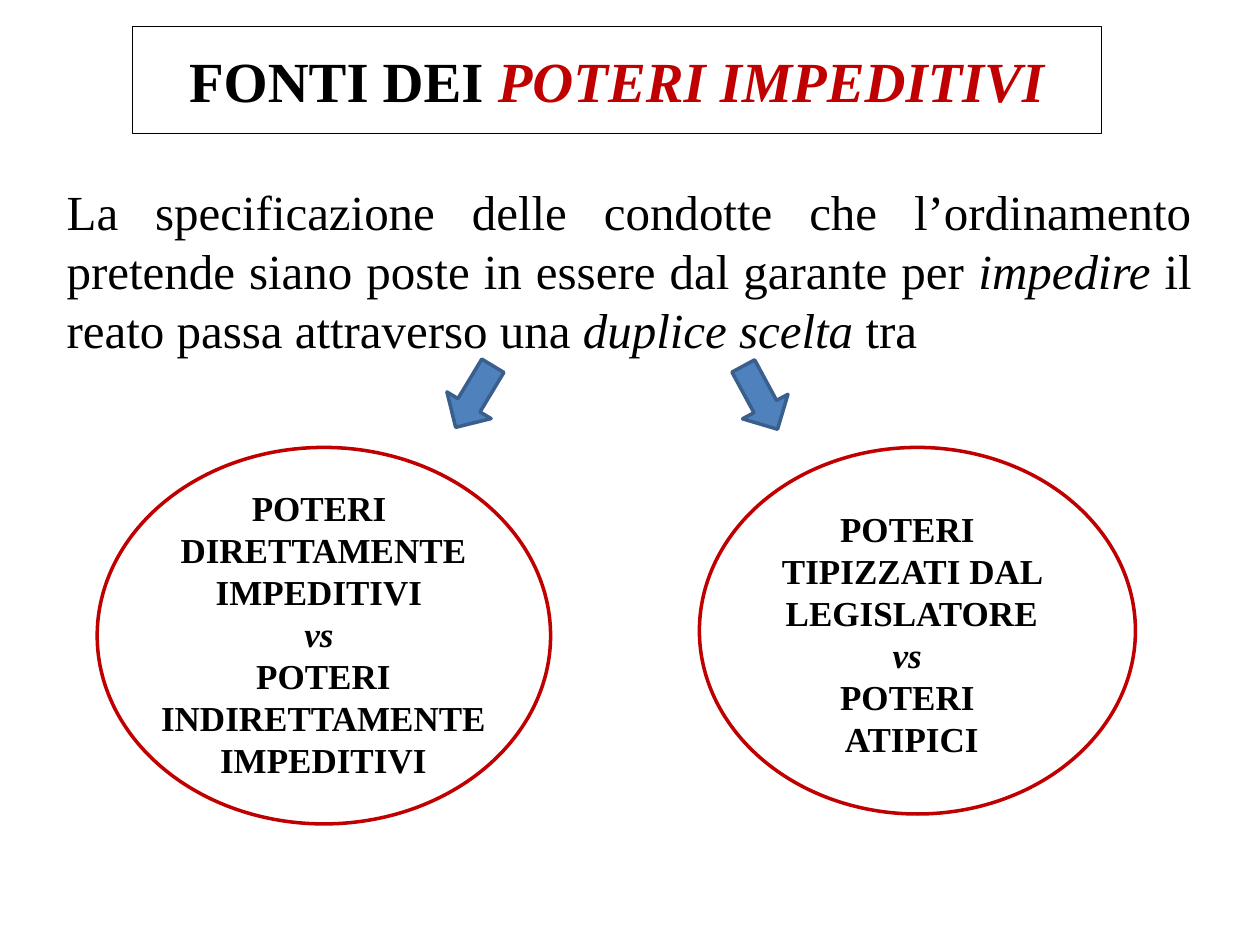
import dataclasses

import pptx
import pptx.dml.color
import pptx.enum.shapes
import pptx.enum.text
import pptx.oxml
import pptx.util

Cm = pptx.util.Cm
Pt = pptx.util.Pt
Align = pptx.enum.text.PP_ALIGN
Anchor = pptx.enum.text.MSO_ANCHOR
Fit = pptx.enum.text.MSO_AUTO_SIZE
Shape = pptx.enum.shapes.MSO_SHAPE


@dataclasses.dataclass(frozen=True)
class Theme:
    font: str = "Times New Roman"
    ink: str = "000000"
    accent: str = "C00000"
    arrow_fill: str = "4F81BD"
    arrow_line: str = "3A5F8C"
    title_size: float = 32.4
    body_size: float = 28
    label_size: float = 20
    thin: float = 0.75
    thick: float = 2


THEME = Theme()


def rgb(value):
    return pptx.dml.color.RGBColor.from_string(value)


def apply(target, **values):
    for name, value in values.items():
        setattr(target, name, value)


def place(shape, box):
    apply(shape, **dict(zip(("left", "top", "width", "height"), map(Cm, box))))


def outline(shape, color, width):
    shape.line.color.rgb = rgb(color)
    shape.line.width = Pt(width)


def write(frame, paragraphs, size, alignment, bold=False, anchor=Anchor.TOP, fit=Fit.NONE):
    """Fill a frame; each paragraph is a list of (text, italic, color) spans."""
    apply(frame, word_wrap=True, auto_size=fit, vertical_anchor=anchor)
    for index, spans in enumerate(paragraphs):
        para = frame.add_paragraph() if index else frame.paragraphs[0]
        para.alignment = alignment
        for text, italic, color in spans:
            span = para.add_run()
            span.text = text
            apply(span.font, name=THEME.font, size=Pt(size), bold=bold, italic=italic)
            span.font.color.rgb = rgb(color)


def add_title(page, box):
    title = page.shapes.title
    place(title, box)
    outline(title, THEME.ink, THEME.thin)
    spans = [("FONTI DEI ", False, THEME.ink), ("POTERI IMPEDITIVI", True, THEME.accent)]
    write(title.text_frame, [spans], THEME.title_size, Align.CENTER, True, Anchor.MIDDLE)


def add_body(page, box):
    body = page.placeholders[1]
    place(body, box)
    pieces = [
        ("La specificazione delle condotte che l’ordinamento pretende siano poste "
         "in essere dal garante per ", False),
        ("impedire", True),
        (" il reato passa attraverso una ", False),
        ("duplice scelta ", True),
        ("tra", False),
    ]
    spans = [(text, italic, THEME.ink) for text, italic in pieces]
    write(body.text_frame, [spans], THEME.body_size, Align.JUSTIFY)
    properties = body.text_frame.paragraphs[0]._p.get_or_add_pPr()
    properties.set("marL", "0")
    properties.set("indent", "0")
    properties.append(pptx.oxml.parse_xml(
        '<a:buNone xmlns:a="http://schemas.openxmlformats.org/drawingml/2006/main"/>'))


def add_choice(page, box, label_box, lines):
    """Draw an ellipse with its label, whose box is relative to the ellipse."""
    left, top, width, height = box
    ellipse = page.shapes.add_shape(Shape.OVAL, *map(Cm, box))
    ellipse.shadow.inherit = False
    ellipse.fill.background()
    outline(ellipse, THEME.accent, THEME.thick)
    across, down, label_width, label_height = label_box
    label = page.shapes.add_textbox(
        Cm(left + across), Cm(top + down), Cm(label_width), Cm(label_height))
    paragraphs = [[(line, line == "vs ", THEME.ink)] for line in lines]
    write(label.text_frame, paragraphs, THEME.label_size, Align.CENTER, True,
          fit=Fit.SHAPE_TO_FIT_TEXT)


def add_arrow(page, box, rotation):
    arrow = page.shapes.add_shape(Shape.DOWN_ARROW, *map(Cm, box))
    arrow.shadow.inherit = False
    arrow.rotation = rotation
    arrow.fill.solid()
    arrow.fill.fore_color.rgb = rgb(THEME.arrow_fill)
    outline(arrow, THEME.arrow_line, THEME.thick)


def main():
    deck = pptx.Presentation()
    apply(deck, slide_width=Cm(25.4), slide_height=Cm(19.05))
    page = deck.slides.add_slide(deck.slide_layouts[1])
    add_title(page, (2.67, 0.53, 19.53, 2.16))
    add_body(page, (1.09, 3.53, 23.19, 3.81))
    add_choice(page, (1.96, 9.02, 9.14, 7.59), (0.71, 0.66, 7.7, 6.25),
               ["POTERI ", "DIRETTAMENTE IMPEDITIVI ", "vs ",
                "POTERI INDIRETTAMENTE IMPEDITIVI"])
    add_choice(page, (14.1, 9.02, 8.79, 7.39), (0.43, 1.09, 7.7, 5.38),
               ["POTERI ", "TIPIZZATI DAL LEGISLATORE", "vs ", "POTERI ", "ATIPICI"])
    add_arrow(page, (9.04, 7.27, 1.04, 1.45), 31.1)
    add_arrow(page, (14.81, 7.29, 1.04, 1.45), 331.6)
    deck.save("out.pptx")


if __name__ == "__main__":
    main()
